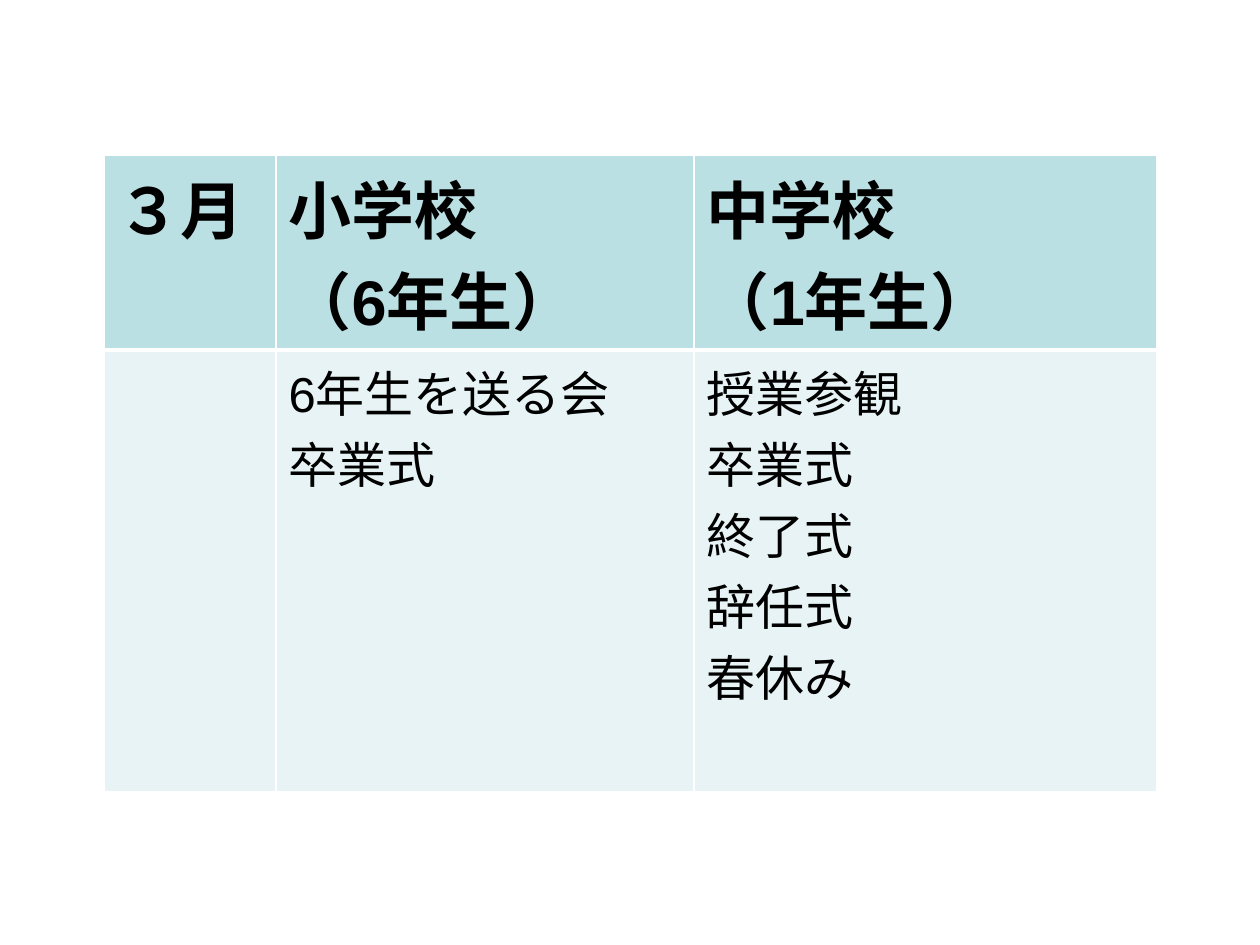
import pptx
import pptx.util
import pptx.dml.color
import pptx.oxml.ns
from lxml import etree

Inches = pptx.util.Inches
Pt = pptx.util.Pt

COLORS = {"head": "BBE0E3", "body": "E7F3F4", "text": "000000", "line": "FFFFFF"}
HEAD = {"name": "Arial", "size": Pt(36), "bold": True}
BODY = {"name": "Arial", "size": Pt(28), "bold": False}
WIDTHS = [1.36, 3.32, 3.67]
ROWS = [
    {
        "height": 1.53, "fill": "head", "font": HEAD,
        "edges": {"lnL": 1, "lnR": 1, "lnT": 1, "lnB": 3},
        "cells": [["３月"], ["小学校", "（6年生）"], ["中学校", "（1年生）"]],
    },
    {
        "height": 3.51, "fill": "body", "font": BODY,
        "edges": {"lnL": 1, "lnR": 1, "lnT": 3, "lnB": 1},
        "cells": [
            [],
            ["6年生を送る会", "卒業式"],
            ["授業参観", "卒業式", "終了式", "辞任式", "春休み"],
        ],
    },
]


def color(key):
    return pptx.dml.color.RGBColor.from_string(COLORS[key])


def add_edges(cell, edges):
    qn = pptx.oxml.ns.qn
    props = cell._tc.get_or_add_tcPr()
    for spot, (tag, width) in enumerate(edges.items()):
        line = etree.Element(qn("a:" + tag), w=str(Pt(width)))
        fill = etree.SubElement(line, qn("a:solidFill"))
        etree.SubElement(fill, qn("a:srgbClr"), val=COLORS["line"])
        props.insert(spot, line)


def add_text(cell, lines, style):
    frame = cell.text_frame
    for spot, line in enumerate(lines):
        para = frame.add_paragraph() if spot else frame.paragraphs[0]
        run = para.add_run()
        run.text = line
        for key, value in style.items():
            setattr(run.font, key, value)
        run.font.color.rgb = color("text")


def add_grid(slide):
    high = sum(row["height"] for row in ROWS)
    frame = slide.shapes.add_table(
        len(ROWS), len(WIDTHS), Inches(0.83), Inches(1.23),
        Inches(sum(WIDTHS)), Inches(high))
    grid = frame.table
    for col, width in zip(grid.columns, WIDTHS):
        col.width = Inches(width)
    for row, data in zip(grid.rows, ROWS):
        row.height = Inches(data["height"])
        for cell, lines in zip(row.cells, data["cells"]):
            cell.fill.solid()
            cell.fill.fore_color.rgb = color(data["fill"])
            add_edges(cell, data["edges"])
            add_text(cell, lines, data["font"])


def main():
    deck = pptx.Presentation()
    deck.slide_width, deck.slide_height = Inches(10), Inches(7.5)
    slide = deck.slides.add_slide(deck.slide_layouts[6])
    add_grid(slide)
    deck.save("out.pptx")


if __name__ == "__main__":
    main()
